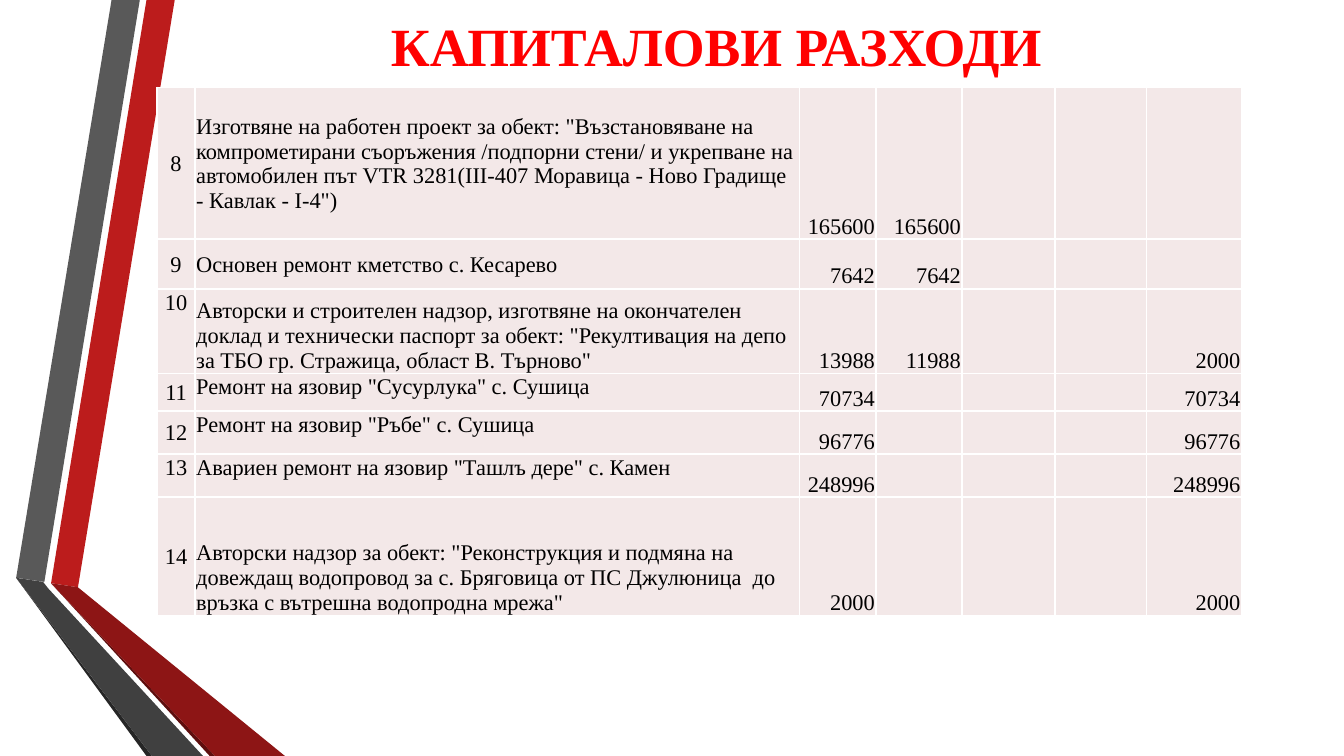
from lxml import etree
from pptx import Presentation
from pptx.dml.color import RGBColor
from pptx.enum.text import MSO_ANCHOR, MSO_AUTO_SIZE, PP_ALIGN
from pptx.oxml.ns import qn
from pptx.util import Pt

PX = 4572
FONT = "Times New Roman"
TOP, MID, BOTTOM = MSO_ANCHOR.TOP, MSO_ANCHOR.MIDDLE, MSO_ANCHOR.BOTTOM
LEFT, CENTER, RIGHT = PP_ALIGN.LEFT, PP_ALIGN.CENTER, PP_ALIGN.RIGHT
TITLE_ONLY = 5

RIBBONS = [
    ("BC1C1C", [(52, 868), (92, 874), (236, 0), (194, 0)]),
    ("595959", [(184, 0), (142, 0), (0, 860), (42, 866)]),
    ("262626", [(0, 860), (194, 1125), (202, 1125)]),
    ("5E0E0E", [(52, 868), (288, 1125), (296, 1125)]),
    ("8D1515", [(52, 868), (296, 1125), (400, 1125), (92, 874)]),
    ("404040", [(278, 1125), (48, 876), (40, 866), (0, 860), (202, 1125)]),
]

COLUMNS = [56, 900, 114, 128, 138, 136, 142]
ROWS = [
    (226, MID, MID, ["8", 'Изготвяне на работен проект за обект: "Възстановяване на '
     'компрометирани съоръжения /подпорни стени/ и укрепване на автомобилен път '
     'VTR 3281(III-407 Моравица - Ново Градище - Кавлак - I-4")',
     "165600", "165600", "", "", ""]),
    (74, MID, MID, ["9", "Основен ремонт кметство с. Кесарево",
     "7642", "7642", "", "", ""]),
    (126, TOP, BOTTOM, ["10", "Авторски и строителен надзор, изготвяне на окончателен "
     'доклад и технически паспорт за обект: "Рекултивация на депо за ТБО '
     'гр. Стражица, област В. Търново"', "13988", "11988", "", "", "2000"]),
    (56, MID, TOP, ["11", 'Ремонт на язовир "Сусурлука" с. Сушица',
     "70734", "", "", "", "70734"]),
    (64, MID, TOP, ["12", 'Ремонт на язовир "Ръбе" с. Сушица',
     "96776", "", "", "", "96776"]),
    (64, TOP, TOP, ["13", 'Авариен ремонт на язовир "Ташлъ дере" с. Камен',
     "248996", "", "", "", "248996"]),
    (176, MID, BOTTOM, ["14", 'Авторски надзор за обект: "Реконструкция и подмяна на '
     "довеждащ водопровод за с. Бряговица от ПС Джулюница  до връзка с вътрешна "
     'водопродна мрежа"', "2000", "", "", "", "2000"]),
]


def rgb(value):
    """Turn a hex string into a colour."""
    return RGBColor.from_string(value)


def set_margins(obj, left, top, right, bottom):
    """Set the inner margins of a text frame or cell in px."""
    obj.margin_left, obj.margin_top = left * PX, top * PX
    obj.margin_right, obj.margin_bottom = right * PX, bottom * PX


def format_run(r, size, color, bold=False):
    """Give a run its font, size and colour."""
    r.font.name, r.font.size, r.font.bold = FONT, Pt(size), bold
    r.font.color.rgb = rgb(color)


def add_ribbons(s, x, y):
    """Draw the folded ribbons from the given corner."""
    for color, points in RIBBONS:
        builder = s.shapes.build_freeform(*points[0], scale=PX)
        builder.add_line_segments(points[1:], close=True)
        sp = builder.convert_to_shape(x * PX, y * PX)
        sp.shadow.inherit = False
        sp.fill.solid()
        sp.fill.fore_color.rgb = rgb(color)
        sp.line.fill.background()


def add_title(s, x, y, w, h, text):
    """Place the title on one line in the upper part of its box."""
    sp = s.shapes.title
    sp.left, sp.top, sp.width, sp.height = x * PX, y * PX, w * PX, h * PX
    tf = sp.text_frame
    tf.text = text
    tf.word_wrap, tf.auto_size = True, MSO_AUTO_SIZE.NONE
    tf.vertical_anchor = MID
    set_margins(tf, 20, 0, 20, 92)
    p = tf.paragraphs[0]
    p.alignment = CENTER
    format_run(p.runs[0], 28.8, "FF0000", bold=True)


def set_borders(cell, color, width):
    """Draw all four borders of a cell."""
    tc_pr = cell._tc.get_or_add_tcPr()
    for side in ("lnL", "lnR", "lnT", "lnB"):
        ln = etree.SubElement(tc_pr, qn(f"a:{side}"), w=str(Pt(width)))
        fill = etree.SubElement(ln, qn("a:solidFill"))
        etree.SubElement(fill, qn("a:srgbClr"), val=color)


def fill_cell(cell, text, anchor, align):
    """Write and format one table cell."""
    set_borders(cell, "FFFFFF", 1)
    cell.fill.solid()
    cell.fill.fore_color.rgb = rgb("F3E8E8")
    set_margins(cell, 2, 2, 2, 0)
    cell.vertical_anchor = anchor
    cell.text = text
    p = cell.text_frame.paragraphs[0]
    p.alignment = align
    for r in p.runs:
        format_run(r, 12, "000000")
    p._p.get_or_add_endParaRPr().set("sz", "1200")


def add_expenses(s, x, y):
    """Build the table of capital expenses from the given corner."""
    w, h = sum(COLUMNS), sum(row[0] for row in ROWS)
    table = s.shapes.add_table(len(ROWS), len(COLUMNS),
                               x * PX, y * PX, w * PX, h * PX).table
    table.first_row = table.horz_banding = False
    for column, width in zip(table.columns, COLUMNS):
        column.width = width * PX
    for i, (height, number_anchor, name_anchor, texts) in enumerate(ROWS):
        table.rows[i].height = height * PX
        anchors = [number_anchor, name_anchor] + [BOTTOM] * 5
        aligns = [CENTER, LEFT] + [RIGHT] * 5
        for j, parts in enumerate(zip(texts, anchors, aligns)):
            fill_cell(table.cell(i, j), *parts)


def main():
    """Build the slide and save it."""
    prs = Presentation()
    prs.slide_width, prs.slide_height = 2000 * PX, 1125 * PX
    s = prs.slides.add_slide(prs.slide_layouts[TITLE_ONLY])
    add_ribbons(s, 24, 0)
    add_title(s, 244, 30, 1644, 166, "КАПИТАЛОВИ РАЗХОДИ")
    add_expenses(s, 234, 130)
    prs.save("out.pptx")


if __name__ == "__main__":
    main()
